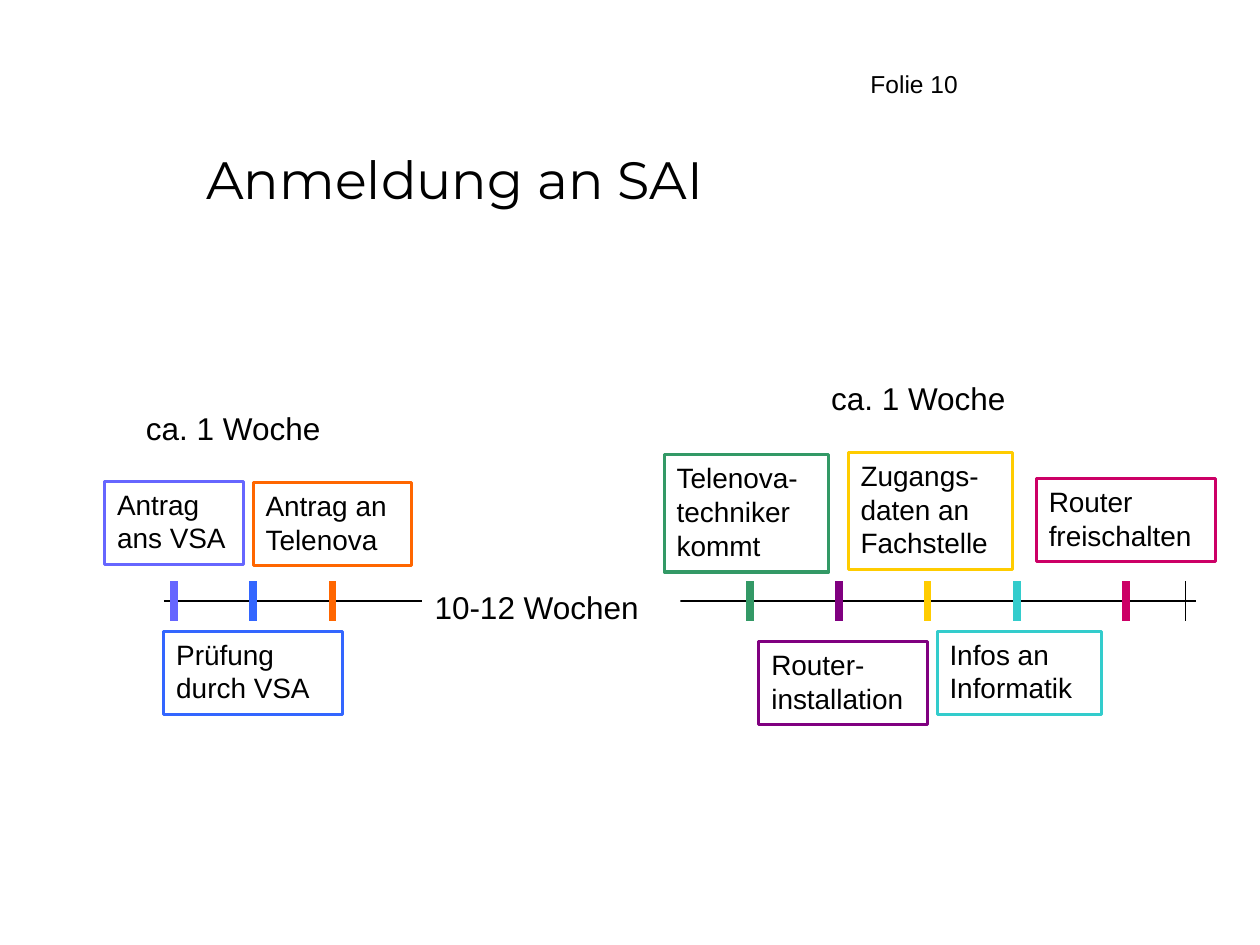
"""Build the registration timeline slide."""
from lxml import etree
from pptx import Presentation
from pptx.dml.color import RGBColor
from pptx.enum.shapes import MSO_CONNECTOR as CONN, MSO_SHAPE as SHAPE
from pptx.enum.text import MSO_ANCHOR as ANCHOR, PP_ALIGN as ALIGN
from pptx.oxml.ns import qn
from pptx.util import Pt

COLORS = {
    "black": "000000", "white": "FFFFFF", "violet": "6666FF", "blue": "3366FF",
    "orange": "FF6600", "green": "339966", "purple": "800080", "yellow": "FFCC00",
    "cyan": "33CCCC", "pink": "CC0066",
}
AXIS_Y = 343.5
TICK_HALF = 11.25
BOX_H = 47.5
TALL_H = 67

STEPS = [
    ("Antrag ans VSA", "violet", 99.4, (59.8, 275, 79.2, BOX_H)),
    ("Prüfung durch VSA", "blue", 144.7, (93.6, 360.7, 102.2, BOX_H)),
    ("Antrag an Telenova", "orange", 190, (144.7, 275.8, 90.7, BOX_H)),
    ("Telenova-techniker kommt", "green", 428.4, (379.6, 259.9, 93.9, TALL_H)),
    ("Router- installation", "purple", 479.2, (433.7, 366.5, 96.5, BOX_H)),
    ("Zugangs-daten an Fachstelle", "yellow", 530, (484.7, 258.5, 93.9, TALL_H)),
    ("Infos an Informatik", "cyan", 581, (535.5, 360.7, 93.9, BOX_H)),
    ("Router freischalten", "pink", 643.5, (592.2, 273.5, 102.2, BOX_H)),
]


def color(name):
    """Return the named colour."""
    return RGBColor.from_string(COLORS[name])


def write(sp, text, size, font="Arial", anchor=ANCHOR.TOP):
    """Put one left-aligned run into a shape."""
    tf = sp.text_frame
    tf.word_wrap = True
    tf.vertical_anchor = anchor
    p = tf.paragraphs[0]
    p.alignment = ALIGN.LEFT
    r = p.add_run()
    r.text = text
    r.font.size = Pt(size)
    r.font.name = font
    r.font.color.rgb = color("black")


def add_text(s, text, box, size, **style):
    """Add a plain text box."""
    write(s.shapes.add_textbox(*map(Pt, box)), text, size, **style)


def add_box(s, text, box, size, line=None, fill=None):
    """Add a rectangle with optional outline and fill."""
    sp = s.shapes.add_shape(SHAPE.RECTANGLE, *map(Pt, box))
    sp.shadow.inherit = False
    if fill:
        sp.fill.solid()
        sp.fill.fore_color.rgb = color(fill)
    else:
        sp.fill.background()
    if line:
        sp.line.color.rgb = color(line)
        sp.line.width = Pt(1.75)
    else:
        sp.line.fill.background()
    write(sp, text, size)


def add_line(s, x1, y1, x2, y2, name="black", width=0.75):
    """Add a straight line without shadow."""
    ln = s.shapes.add_connector(CONN.STRAIGHT, Pt(x1), Pt(y1), Pt(x2), Pt(y2))
    ln.line.color.rgb = color(name)
    ln.line.width = Pt(width)
    etree.SubElement(ln._element.spPr, qn("a:effectLst"))


def add_tick(s, x, name="black", width=0.75):
    """Add a vertical mark across the time axis."""
    add_line(s, x, AXIS_Y - TICK_HALF, x, AXIS_Y + TICK_HALF, name, width)


def main():
    """Create and save the slide."""
    prs = Presentation()
    prs.slide_width, prs.slide_height = Pt(720), Pt(540)
    s = prs.slides.add_slide(prs.slide_layouts[6])
    add_text(s, "Folie 10", (490.3, 36, 238.3, 24.5), 14)
    add_text(s, "Anmeldung an SAI", (110.9, 80.6, 565.9, 42.5), 30,
             font="Montserrat", anchor=ANCHOR.MIDDLE)
    add_line(s, 93.6, AXIS_Y, 683.3, AXIS_Y)
    add_tick(s, 677.5)
    add_box(s, "10-12 Wochen", (241.2, 332.6, 147.6, 28.8), 18, fill="white")
    for text, name, x, box in STEPS:
        add_tick(s, x, name, 4.5)
        add_box(s, text, box, 16, line=name)
    for x, y in ((76.3, 230.4), (467.8, 213.1)):
        add_text(s, "ca. 1 Woche", (x, y, 118.8, 28.8), 18)
    prs.save("out.pptx")


if __name__ == "__main__":
    main()
